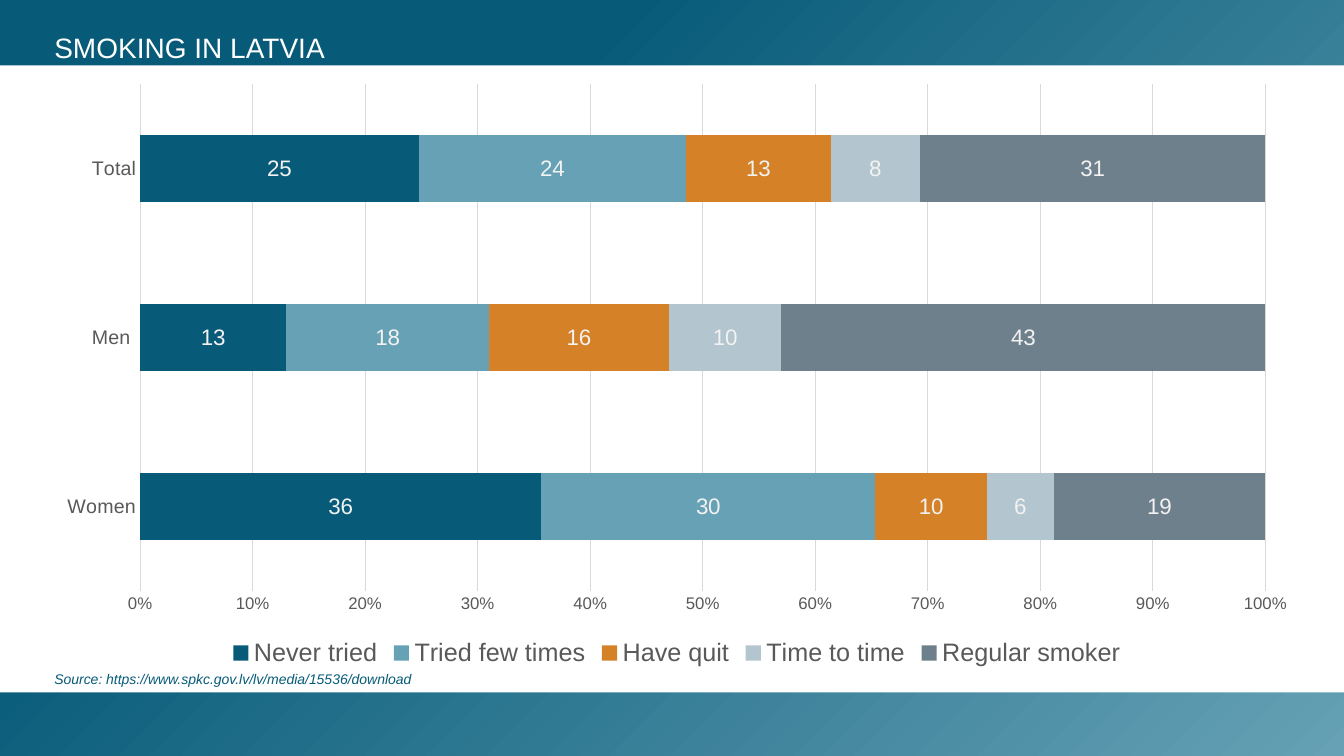
from pptx import Presentation
from pptx.chart.data import CategoryChartData
from pptx.dml.color import RGBColor
from pptx.enum.chart import XL_CHART_TYPE as ChartType
from pptx.enum.chart import XL_LEGEND_POSITION as LegendPosition
from pptx.enum.chart import XL_TICK_MARK as TickMark
from pptx.enum.shapes import MSO_SHAPE as Shape
from pptx.enum.text import MSO_ANCHOR as Anchor
from pptx.oxml import parse_xml
from pptx.util import Cm, Pt

TEAL, LIGHT_TEAL, WHITE = "075B79", "66A1B5", "FFFFFF"
GRAY_TEXT, GRID, LABEL = "595959", "D9D9D9", "F2F2F2"
WIDTH, HEIGHT = 33.88, 19.05

GROUPS = ["Women", "Men ", "Total"]
HABITS = [
    ("Never tried", TEAL, (36, 13, 25)),
    ("Tried few times", LIGHT_TEAL, (30, 18, 24)),
    ("Have quit", "D48127", (10, 16, 13)),
    ("Time to time", "B3C5CE", (6, 10, 8)),
    ("Regular smoker", "6E808C", (19, 43, 31)),
]
PLOT_LAYOUT = (
    '<c:layout xmlns:c="http://schemas.openxmlformats.org/drawingml/2006/chart">'
    '<c:manualLayout><c:layoutTarget val="inner"/>'
    '<c:xMode val="edge"/><c:yMode val="edge"/>'
    '<c:x val="0.077"/><c:y val="0.019"/><c:w val="0.887"/><c:h val="0.846"/>'
    '</c:manualLayout></c:layout>'
)


def color(value):
    return RGBColor.from_string(value)


class SlideBuilder:
    def __init__(self, page, font_name="Arial"):
        self.page = page
        self.font_name = font_name

    def style(self, font, size, value, italic=None):
        font.name = self.font_name
        font.size = Pt(size)
        font.color.rgb = color(value)
        font.italic = italic

    def band(self, top, height):
        band = self.page.shapes.add_shape(
            Shape.RECTANGLE, 0, Cm(top), Cm(WIDTH), Cm(height))
        band.shadow.inherit = False
        band.line.fill.background()
        return band.fill

    def gradient(self, top, height, stops):
        fill = self.band(top, height)
        fill.gradient()
        fill.gradient_angle = 315
        for stop, (position, value) in zip(fill.gradient_stops, stops):
            stop.position = position
            stop.color.rgb = color(value)

    def panel(self, top, height, value):
        fill = self.band(top, height)
        fill.solid()
        fill.fore_color.rgb = color(value)

    def text(self, words, place, size, value, italic=None,
             anchor=Anchor.TOP, margins=(0.25, 0.13), spacing=None):
        box = self.page.shapes.add_textbox(*map(Cm, place))
        frame = box.text_frame
        frame.word_wrap = True
        frame.vertical_anchor = anchor
        frame.margin_left = frame.margin_right = Cm(margins[0])
        frame.margin_top = frame.margin_bottom = Cm(margins[1])
        para = frame.paragraphs[0]
        para.text = words
        para.line_spacing = spacing
        self.style(para.font, size, value, italic)

    def stacked_bars(self, groups, habits, place):
        data = CategoryChartData(number_format="0")
        data.categories = groups
        for name, _, values in habits:
            data.add_series(name, values)
        chart = self.page.shapes.add_chart(
            ChartType.BAR_STACKED_100, *map(Cm, place), data).chart
        self.style(chart.font, 10, "000000")
        chart.has_title = False

        # Plot and series
        plot = chart.plots[0]
        plot.gap_width, plot.overlap = 150, 100
        plot.vary_by_categories = False
        for series, (_, value, _) in zip(plot.series, habits):
            series.format.fill.solid()
            series.format.fill.fore_color.rgb = color(value)
            labels = series.data_labels
            labels.show_value = True
            self.style(labels.font, 16, LABEL)

        # Axes
        group_axis, share_axis = chart.category_axis, chart.value_axis
        for axis, size in ((group_axis, 14), (share_axis, 12)):
            axis.major_tick_mark = axis.minor_tick_mark = TickMark.NONE
            self.style(axis.tick_labels.font, size, GRAY_TEXT)
        share_axis.has_major_gridlines = True
        for line in (group_axis.format.line, share_axis.major_gridlines.format.line):
            line.color.rgb = color(GRID)
            line.width = Pt(0.75)
        share_axis.format.line.fill.background()
        share_axis.minimum_scale, share_axis.maximum_scale = 0, 1
        share_axis.major_unit = 0.1
        share_axis.tick_labels.number_format = "0%"
        share_axis.tick_labels.number_format_is_linked = False

        # Legend and plot area
        chart.has_legend = True
        chart.legend.position = LegendPosition.BOTTOM
        chart.legend.include_in_layout = False
        self.style(chart.legend.font, 18, GRAY_TEXT)
        area = chart.element.xpath("c:chart/c:plotArea")[0]
        for layout in area.xpath("c:layout"):
            area.remove(layout)
        area.insert(0, parse_xml(PLOT_LAYOUT))


def main():
    deck = Presentation()
    deck.slide_width, deck.slide_height = Cm(WIDTH), Cm(HEIGHT)
    builder = SlideBuilder(deck.slides.add_slide(deck.slide_layouts[6]))

    # Backdrop
    builder.gradient(0, HEIGHT, [(0.3, TEAL), (1, LIGHT_TEAL)])
    builder.panel(1.65, 15.8, WHITE)

    # Title, chart and source
    builder.text("SMOKING IN LATVIA", (1.04, 0.61, 31.98, 1.19), 20, WHITE,
                 anchor=Anchor.BOTTOM, margins=(0.33, 0.18), spacing=0.8)
    builder.stacked_bars(GROUPS, HABITS, (1.07, 1.83, 31.98, 15.11))
    builder.text("Source: https://www.spkc.gov.lv/lv/media/15536/download",
                 (1.12, 16.76, 19.4, 0.69), 10, TEAL, italic=True)

    deck.save("out.pptx")


if __name__ == "__main__":
    main()
